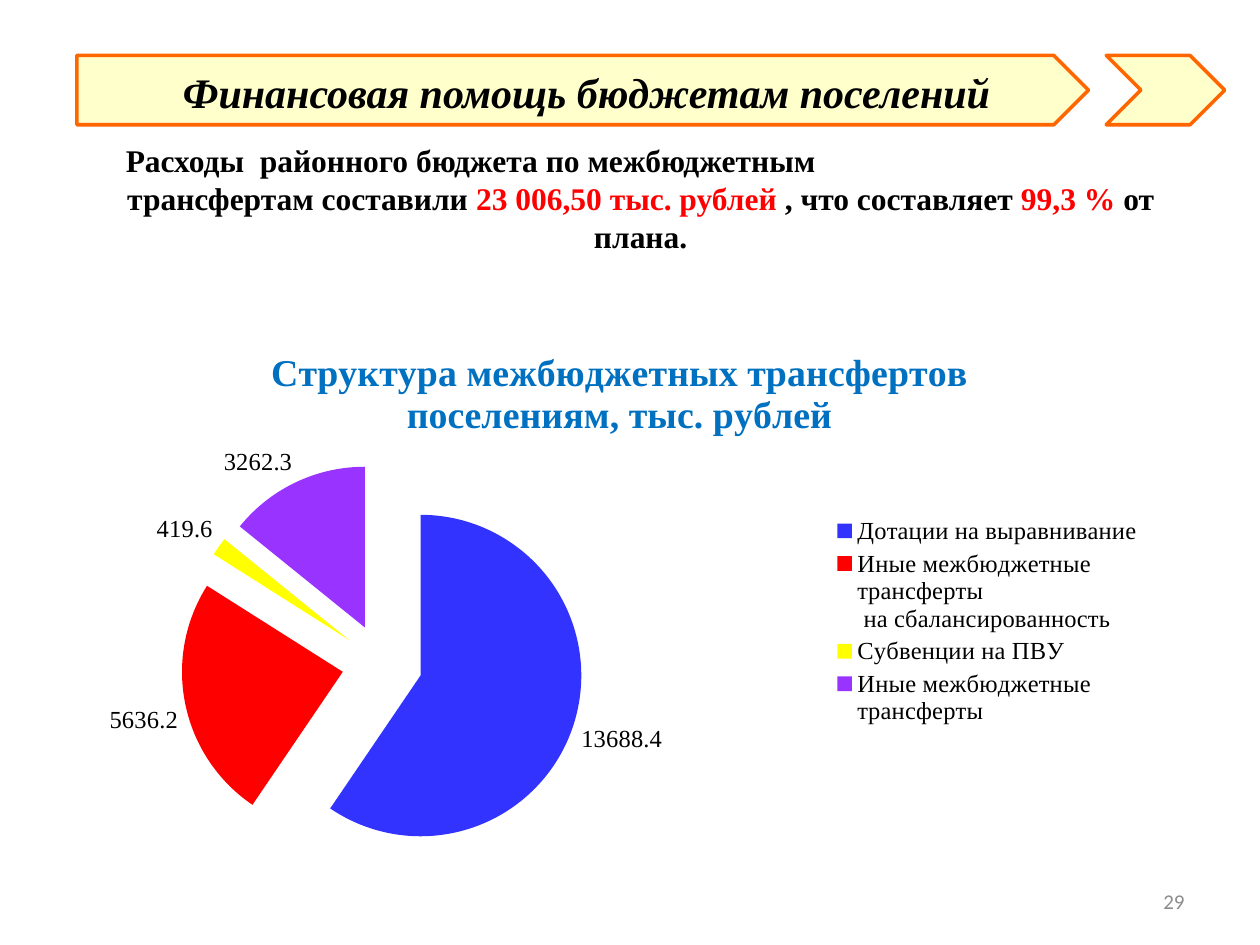
import lxml.etree
import pptx
import pptx.chart.data
import pptx.dml.color
import pptx.enum.chart
import pptx.enum.shapes
import pptx.enum.text
import pptx.oxml
import pptx.oxml.ns
import pptx.util

Inches = pptx.util.Inches
Pt = pptx.util.Pt
qn = pptx.oxml.ns.qn
SHAPE = pptx.enum.shapes.MSO_SHAPE
ALIGN = pptx.enum.text.PP_ALIGN
ANCHOR = pptx.enum.text.MSO_ANCHOR
SERIF = "Times New Roman"
CHART_TITLE = "Структура межбюджетных трансфертов поселениям, тыс. рублей"
TRANSFERS = [
    ("Дотации на выравнивание", 13688.4, "3333FF"),
    ("Иные межбюджетные трансферты\n на сбалансированность", 5636.2, "FF0000"),
    ("Субвенции на ПВУ", 419.6, "FFFF00"),
    ("Иные межбюджетные трансферты", 3262.3, "9933FF"),
]


def rgb(value):
    return pptx.dml.color.RGBColor.from_string(value)


def format_font(font, color="000000", **values):
    for name, value in values.items():
        setattr(font, name, value)
    font.color.rgb = rgb(color)


def add_banner(s, kind, left, width):
    sp = s.shapes.add_shape(kind, Inches(left), Inches(0.44), Inches(width), Inches(0.55))
    sp.shadow.inherit = False
    sp.fill.solid()
    sp.fill.fore_color.rgb = rgb("FFFFCC")
    sp.line.color.rgb = rgb("FF6600")
    sp.line.width = Pt(2)


def add_text(s, box, paragraphs, anchor=ANCHOR.TOP, **style):
    sp = s.shapes.add_textbox(*map(Inches, box))
    tf = sp.text_frame
    tf.word_wrap = True
    tf.vertical_anchor = anchor
    for i, (align, indent, runs) in enumerate(paragraphs):
        p = tf.paragraphs[0] if i == 0 else tf.add_paragraph()
        p.alignment = align
        if indent:
            p._p.get_or_add_pPr().set("marL", str(Inches(indent)))
        for text, color in runs:
            r = p.add_run()
            r.text = text
            format_font(r.font, color, **style)


def set_plot_layout(chart, x, y, w, h):
    area = chart._chartSpace.chart.plotArea
    for old in area.findall(qn("c:layout")):
        area.remove(old)
    layout = lxml.etree.Element(qn("c:layout"))
    manual = lxml.etree.SubElement(layout, qn("c:manualLayout"))
    values = dict(layoutTarget="inner", xMode="edge", yMode="edge", x=x, y=y, w=w, h=h)
    for name, value in values.items():
        lxml.etree.SubElement(manual, qn("c:" + name)).set("val", str(value))
    area.insert(0, layout)


def explode(series, percent):
    explosion = lxml.etree.Element(qn("c:explosion"))
    explosion.set("val", str(percent))
    series._element.find(qn("c:tx")).addnext(explosion)


def add_pie(s, box):
    data = pptx.chart.data.CategoryChartData(number_format="0.0")
    data.categories = [name for name, _, _ in TRANSFERS]
    data.add_series(CHART_TITLE, [value for _, value, _ in TRANSFERS])
    kind = pptx.enum.chart.XL_CHART_TYPE.PIE
    chart = s.shapes.add_chart(kind, *map(Inches, box), data).chart
    format_font(chart.font, size=Pt(18), name="Calibri")

    chart.has_title = True
    tf = chart.chart_title.text_frame
    tf.text = CHART_TITLE
    format_font(tf.paragraphs[0].runs[0].font, "0070C0", size=Pt(21.6), name=SERIF, bold=True)
    chart.chart_title.include_in_layout = False

    chart.has_legend = True
    chart.legend.position = pptx.enum.chart.XL_LEGEND_POSITION.RIGHT
    chart.legend.include_in_layout = False
    format_font(chart.legend.font, size=Pt(14), name=SERIF)

    plot = chart.plots[0]
    plot.vary_by_categories = True
    series = plot.series[0]
    explode(series, 25)
    for i, (_, _, color) in enumerate(TRANSFERS):
        fill = series.points[i].format.fill
        fill.solid()
        fill.fore_color.rgb = rgb(color)

    labels = series.data_labels
    labels.show_value = True
    labels.number_format = "0.0"
    labels.number_format_is_linked = False
    labels.position = pptx.enum.chart.XL_LABEL_POSITION.OUTSIDE_END
    format_font(labels.font, size=Pt(14), name=SERIF)
    set_plot_layout(chart, 0.01, 0.235, 0.536, 0.673)


def main():
    prs = pptx.Presentation()
    prs.slide_width, prs.slide_height = Inches(10), Inches(7.5)
    s = prs.slides.add_slide(prs.slide_layouts[6])

    add_banner(s, SHAPE.PENTAGON, 0.61, 8.03)
    add_banner(s, SHAPE.CHEVRON, 8.78, 0.94)
    heading = [("Финансовая помощь бюджетам поселений", "000000")]
    add_text(s, (0.67, 0.29, 7.97, 0.87), [(ALIGN.CENTER, 0, heading)], ANCHOR.MIDDLE,
             size=Pt(24), name=SERIF, bold=True, italic=True)

    add_pie(s, (0.67, 2.56, 8.5, 4.74))
    summary = [
        (ALIGN.LEFT, 0.38, [("Расходы  районного бюджета по межбюджетным", "000000")]),
        (ALIGN.CENTER, 0, [
            ("трансфертам составили ", "000000"),
            ("23 006,50 тыс. рублей ", "FF0000"),
            (", что составляет ", "000000"),
            ("99,3 %", "FF0000"),
            (" от плана.", "000000"),
        ]),
    ]
    add_text(s, (0.52, 1.07, 9.13, 1.01), summary, size=Pt(18), name=SERIF, bold=True)
    add_text(s, (7.17, 6.95, 2.33, 0.4), [(ALIGN.RIGHT, 0, [("29", "8C8C8C")])],
             ANCHOR.MIDDLE, size=Pt(12), name="Calibri")
    prs.save("out.pptx")


if __name__ == "__main__":
    main()
